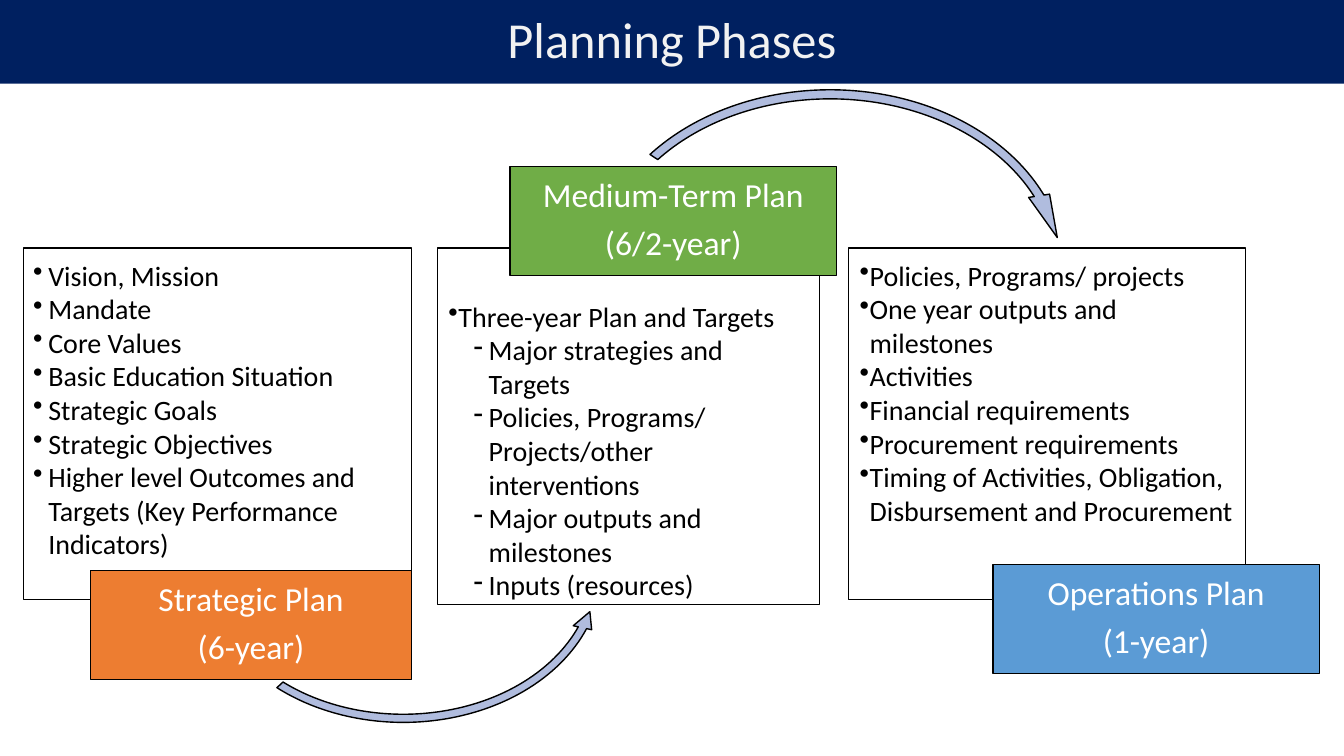
from dataclasses import dataclass

from lxml.etree import SubElement
from pptx import Presentation
from pptx.dml.color import RGBColor
from pptx.enum.shapes import MSO_SHAPE as Preset
from pptx.enum.text import MSO_ANCHOR as Anchor, MSO_AUTO_SIZE as AutoSize, PP_ALIGN as Align
from pptx.oxml.ns import qn
from pptx.shapes.autoshape import Shape
from pptx.slide import Slide
from pptx.util import Pt


@dataclass(frozen=True)
class Theme:
    font: str = "Calibri"
    title_size: float = 36
    label_size: float = 24
    body_size: float = 20
    navy: str = "002060"
    title_text: str = "F2F2F2"
    ink: str = "000000"
    white: str = "FFFFFF"
    green: str = "70AD47"
    orange: str = "ED7D31"
    blue: str = "5B9BD5"
    arrow: str = "B0BCDE"


@dataclass(frozen=True)
class Area:
    left: float
    top: float
    width: float
    height: float


@dataclass(frozen=True)
class Bullet:
    mark: str
    margin: float
    hang: float


@dataclass(frozen=True)
class Details:
    area: Area
    items: list[tuple[Bullet, str]]
    top_inset: float = 7.2


@dataclass(frozen=True)
class Label:
    area: Area
    fill: str
    lines: tuple[str, str]


@dataclass(frozen=True)
class Arrow:
    area: Area
    preset: Preset
    adjustments: tuple[float, ...]


THEME = Theme()
SLIDE = Area(0, 0, 960, 540)
TITLE = Area(0, 0, SLIDE.width, 59.8)
BOX_TOP, BOX_HEIGHT = 177.1, 251.3
LABEL_WIDTH, LABEL_HEIGHT = 233.3, 77.8

WIDE_DOT = Bullet("•", 10.8, 10.8)
DOT = Bullet("•", 7.9, 7.2)
DASH = Bullet("-", 29.5, 10.8)

DETAILS = [
    Details(Area(16.6, BOX_TOP, 277.2, BOX_HEIGHT), [
        (WIDE_DOT, "Vision, Mission"),
        (WIDE_DOT, "Mandate"),
        (WIDE_DOT, "Core Values"),
        (WIDE_DOT, "Basic Education Situation"),
        (WIDE_DOT, "Strategic Goals"),
        (WIDE_DOT, "Strategic Objectives"),
        (WIDE_DOT, "Higher level Outcomes and Targets (Key Performance Indicators)"),
    ]),
    Details(Area(312.5, BOX_TOP, 272.9, 254.9), [
        (DOT, "Three-year Plan and Targets"),
        (DASH, "Major strategies and Targets"),
        (DASH, "Policies, Programs/ Projects/other interventions"),
        (DASH, "Major outputs and milestones"),
        (DASH, "Inputs (resources)"),
    ], top_inset=36.5),
    Details(Area(606.2, BOX_TOP, 283.7, BOX_HEIGHT), [
        (DOT, "Policies, Programs/ projects"),
        (DOT, "One year outputs and milestones"),
        (DOT, "Activities"),
        (DOT, "Financial requirements"),
        (DOT, "Procurement requirements"),
        (DOT, "Timing of Activities, Obligation, Disbursement and Procurement"),
    ]),
]

LABELS = [
    Label(Area(364.3, 118.8, LABEL_WIDTH, LABEL_HEIGHT), THEME.green,
          ("Medium-Term Plan", "(6/2-year)")),
    Label(Area(64.8, 407.5, 229, LABEL_HEIGHT), THEME.orange,
          ("Strategic Plan", "(6-year)")),
    Label(Area(709.2, 403.2, LABEL_WIDTH, LABEL_HEIGHT), THEME.blue,
          ("Operations Plan", "(1-year)")),
]

ARROWS = [
    Arrow(Area(142.6, 295.9, 290.9, 223.9), Preset.LEFT_CIRCULAR_ARROW,
          (0.026, 3.164, 10.54, 82.359, 0.03)),
    Arrow(Area(419.8, 59.8, 346.3, 270.7), Preset.CIRCULAR_ARROW,
          (0.024, 6.839, 203.809, 128.032, 0.028)),
]


def rgb(colour: str) -> RGBColor:
    return RGBColor.from_string(colour)


def paint(shape: Shape, colour: str) -> None:
    shape.fill.solid()
    shape.fill.fore_color.rgb = rgb(colour)


def add_outlined(page: Slide, preset: Preset, area: Area, fill: str | None = None) -> Shape:
    shape = page.shapes.add_shape(
        preset, Pt(area.left), Pt(area.top), Pt(area.width), Pt(area.height))
    shape.shadow.inherit = False
    shape.line.color.rgb = rgb(THEME.ink)
    shape.line.width = Pt(1)
    if fill:
        paint(shape, fill)
    else:
        shape.fill.background()
    return shape


def write(shape: Shape, lines: list[str], size: float, colour: str, align: Align,
          anchor: Anchor, insets: tuple[float, float, float]) -> list:
    frame = shape.text_frame
    frame.word_wrap = True
    frame.auto_size = AutoSize.NONE
    frame.vertical_anchor = anchor
    side, top, bottom = insets
    frame.margin_left = frame.margin_right = Pt(side)
    frame.margin_top, frame.margin_bottom = Pt(top), Pt(bottom)
    frame.text = "\n".join(lines)
    for para in frame.paragraphs:
        para.alignment = align
        para.font.name = THEME.font
        para.font.size = Pt(size)
        para.font.color.rgb = rgb(colour)
    return list(frame.paragraphs)


def set_bullet(para, bullet: Bullet) -> None:
    properties = para._p.get_or_add_pPr()
    properties.set("marL", str(Pt(bullet.margin)))
    properties.set("indent", str(-Pt(bullet.hang)))
    mark = SubElement(properties, qn("a:buChar"))
    mark.set("char", bullet.mark)
    defaults = properties.find(qn("a:defRPr"))
    if defaults is not None:
        defaults.addprevious(mark)


def add_details(page: Slide, details: Details) -> None:
    box = add_outlined(page, Preset.RECTANGLE, details.area)
    paras = write(box, [text for _, text in details.items], THEME.body_size, THEME.ink,
                  Align.LEFT, Anchor.TOP, (7.2, details.top_inset, 7.2))
    for para, (bullet, _) in zip(paras, details.items):
        set_bullet(para, bullet)


def add_label(page: Slide, label: Label) -> None:
    box = add_outlined(page, Preset.RECTANGLE, label.area, label.fill)
    for para in write(box, list(label.lines), THEME.label_size, THEME.white,
                      Align.CENTER, Anchor.MIDDLE, (2.2, 1.4, 1.4)):
        para.line_spacing = 0.9
        para.space_after = Pt(8.4)


def add_arrow(page: Slide, arrow: Arrow) -> None:
    shape = add_outlined(page, arrow.preset, arrow.area, THEME.arrow)
    for index, value in enumerate(arrow.adjustments):
        shape.adjustments[index] = value


def set_title(page: Slide, text: str) -> None:
    title = page.shapes.title
    title.left, title.top = Pt(TITLE.left), Pt(TITLE.top)
    title.width, title.height = Pt(TITLE.width), Pt(TITLE.height)
    paint(title, THEME.navy)
    for para in write(title, [text], THEME.title_size, THEME.title_text,
                      Align.CENTER, Anchor.MIDDLE, (7.2, 3.6, 3.6)):
        para.line_spacing = 0.9


def main() -> None:
    deck = Presentation()
    deck.slide_width, deck.slide_height = Pt(SLIDE.width), Pt(SLIDE.height)
    page = deck.slides.add_slide(deck.slide_layouts[5])
    set_title(page, "Planning Phases")
    for details in DETAILS:
        add_details(page, details)
    for label in LABELS:
        add_label(page, label)
    for arrow in ARROWS:
        add_arrow(page, arrow)
    deck.save("out.pptx")


if __name__ == "__main__":
    main()
